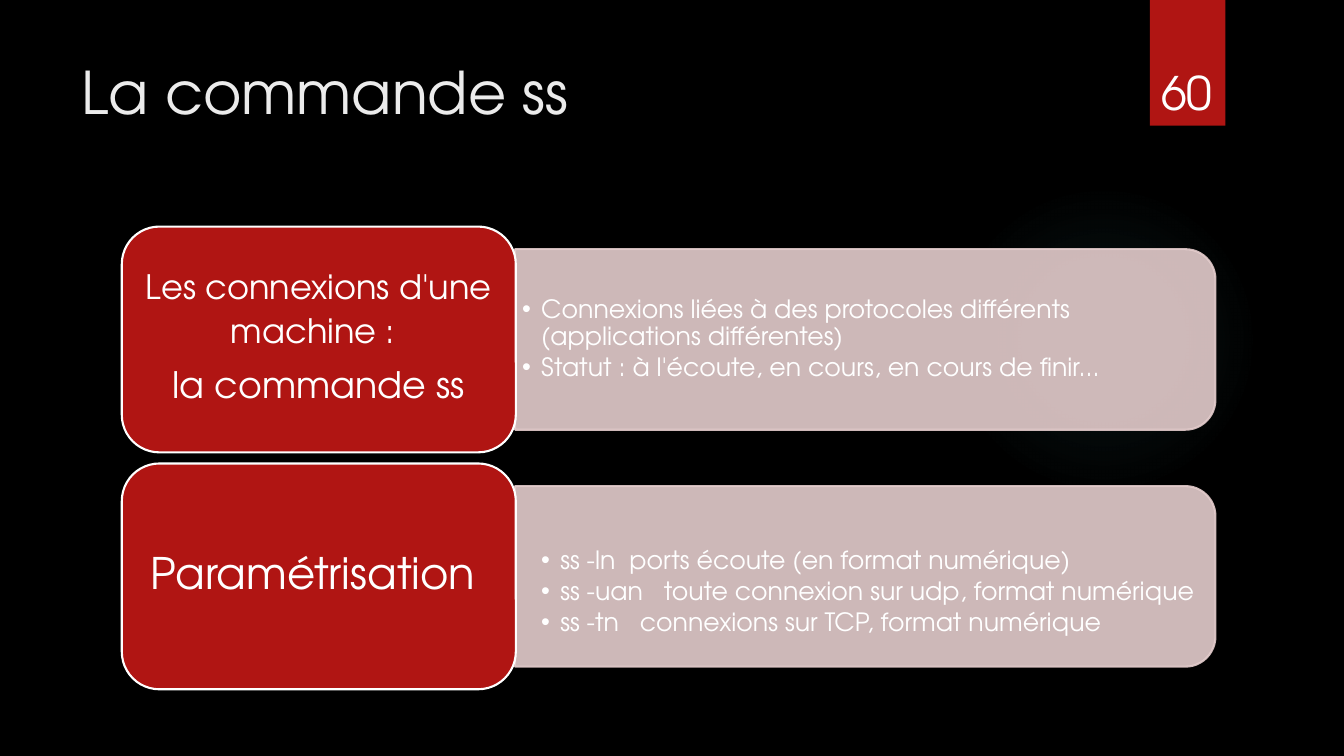
import pptx
import pptx.util
import pptx.oxml
import pptx.dml.color
import pptx.enum.shapes
import pptx.enum.text
from dataclasses import dataclass
from lxml import etree

Cm, Pt = pptx.util.Cm, pptx.util.Pt
Kind = pptx.enum.shapes.MSO_SHAPE
Align = pptx.enum.text.PP_ALIGN
Anchor = pptx.enum.text.MSO_ANCHOR
qn = pptx.oxml.ns.qn


@dataclass(frozen=True)
class Theme:
    face: str = "TeX Gyre Adventor"
    back: str = "000000"
    red: str = "B01513"
    pale: str = "E4CCCC"
    white: str = "FFFFFF"
    head: str = "EBEBEB"
    glow: str = "50B9C1"
    title: int = 42
    number: int = 33
    body: int = 18


def rgb(code):
    return pptx.dml.color.RGBColor.from_string(code)


def apply(item, values):
    for name, value in values.items():
        setattr(item, name, value)


def fade(fill, percent):
    """Make a solid fill partly transparent."""
    for color in fill._xPr.iter(qn("a:srgbClr")):
        etree.SubElement(color, qn("a:alpha"), val=str(percent * 1000))


class Deck:
    def __init__(self, theme):
        self.theme = theme
        self.show = pptx.Presentation()
        apply(self.show, {"slide_width": Cm(33.87), "slide_height": Cm(19.05)})
        self.slide = self.show.slides.add_slide(self.show.slide_layouts[5])
        fill = self.slide.background.fill
        fill.solid()
        fill.fore_color.rgb = rgb(theme.back)

    def shape(self, kind, box, color, line=None, alpha=None, turn=0):
        item = self.slide.shapes.add_shape(kind, *map(Cm, box))
        item.shadow.inherit = False
        item.rotation = turn
        item.fill.solid()
        item.fill.fore_color.rgb = rgb(color)
        if line:
            item.line.width = Pt(1.5)
            item.line.color.rgb = rgb(line)
        else:
            item.line.fill.background()
        if alpha:
            fade(item.line.fill, alpha)
            solid = item._element.spPr.find(qn("a:solidFill"))
            etree.SubElement(solid[0], qn("a:alpha"), val=str(alpha * 1000))
        return item

    def halo(self, box, stops):
        item = self.shape(Kind.OVAL, box, self.theme.glow)
        solid = item._element.spPr.find(qn("a:solidFill"))
        grad = etree.Element(qn("a:gradFill"), rotWithShape="1")
        marks = etree.SubElement(grad, qn("a:gsLst"))
        for pos, alpha in stops:
            mark = etree.SubElement(marks, qn("a:gs"), pos=str(pos * 1000))
            color = etree.SubElement(mark, qn("a:srgbClr"), val=self.theme.glow)
            etree.SubElement(color, qn("a:alpha"), val=str(alpha * 1000))
        way = etree.SubElement(grad, qn("a:path"), path="circle")
        etree.SubElement(way, qn("a:fillToRect"), l="50000", t="50000", r="50000", b="50000")
        solid.getparent().replace(solid, grad)

    def words(self, frame, paras, color, form, bullet=None):
        """Each paragraph is a list of (text, size) runs; bullet is its indent in cm."""
        for index, runs in enumerate(paras):
            para = frame.add_paragraph() if index else frame.paragraphs[0]
            if bullet:
                props = para._p.get_or_add_pPr()
                props.set("marL", str(Cm(bullet)))
                props.set("indent", str(-Cm(0.48)))
                etree.SubElement(props, qn("a:buFont"), typeface="Arial")
                etree.SubElement(props, qn("a:buChar"), char="•")
            apply(para, form)
            for text, size in runs:
                run = para.add_run()
                run.text = text
                apply(run.font, {"name": self.theme.face, "size": Pt(size)})
                run.font.color.rgb = rgb(color)

    def text(self, box, paras, form, pads=(0.25, 0.13, 0.25, 0.13), anchor=Anchor.MIDDLE, bullet=None):
        frame = self.slide.shapes.add_textbox(*map(Cm, box)).text_frame
        sides = ("margin_left", "margin_top", "margin_right", "margin_bottom")
        apply(frame, dict(zip(sides, map(Cm, pads))))
        apply(frame, {"word_wrap": True, "vertical_anchor": anchor})
        self.words(frame, paras, self.theme.white, form, bullet)

    def title(self, box, text):
        item = self.slide.shapes.title
        apply(item, dict(zip(("left", "top", "width", "height"), map(Cm, box))))
        apply(item.text_frame, {"vertical_anchor": Anchor.TOP, "word_wrap": True,
                                "auto_size": pptx.enum.text.MSO_AUTO_SIZE.NONE})
        self.words(item.text_frame, [[(text, self.theme.title)]],
                   self.theme.head, {"alignment": Align.LEFT})

    def row(self, top, label, pads, points, bullet, drop):
        look = self.theme
        # Pale panel, turned so that its rounded end faces right
        wide, high = 17.65, 4.55
        shift = (wide - high) / 2
        self.shape(Kind.ROUND_2_SAME_RECTANGLE, (12.98 + shift, top + 0.57 - shift, high, wide),
                   look.pale, look.pale, 90, 90)
        self.text((12.98, top + 0.79, 17.42, 4.11), [[(point, look.body)] for point in points],
                  {"line_spacing": 0.9, "space_after": Pt(2.7)},
                  (0.18, 0.1 + drop, 0.18, 0.1), bullet=bullet)
        # Red card with its label
        self.shape(Kind.ROUNDED_RECTANGLE, (3.07, top, 9.93, 5.69), look.red, look.white)
        self.text((3.35, top + 0.25, 9.37, 5.13), label,
                  {"alignment": Align.CENTER, "line_spacing": 0.9, "space_after": Pt(10.5)}, pads)


def main():
    look = Theme()
    deck = Deck(look)

    # Backdrop and page number
    deck.halo((23.9, 4.65, 7.82, 7.82), [(0, 7), (36, 6), (69, 0)])
    deck.shape(Kind.RECTANGLE, (28.98, 0, 1.9, 3.17), look.red)
    deck.text((29.01, 1.5, 1.98, 1.68), [[("60", look.number)]], {}, anchor=Anchor.TOP)

    # Title
    deck.title((1.8, 1.27, 26.14, 3.89), "La commande ss")

    # Rows: label, padding, points, indent, drop of the points
    rows = [
        ([[("Les connexions d'une machine :", 24), (" ", 30)], [("la commande ss", 26)]],
         (0.25, 0.13, 0.25, 0.13),
         ["Connexions liées à des protocoles différents (applications différentes)",
          "Statut : à l'écoute, en cours, en cours de finir..."], 0.48, 0),
        ([[("Paramétrisation ", 31)]],
         (0.33, 0.15, 0.33, 0.15),
         ["ss -ln  ports écoute (en format numérique)",
          "ss -uan   toute connexion sur udp, format numérique",
          "ss -tn   connexions sur TCP, format numérique"], 0.96, 0.78),
    ]
    for index, parts in enumerate(rows):
        deck.row(5.71 + 5.97 * index, *parts)

    deck.show.save("out.pptx")


if __name__ == "__main__":
    main()
